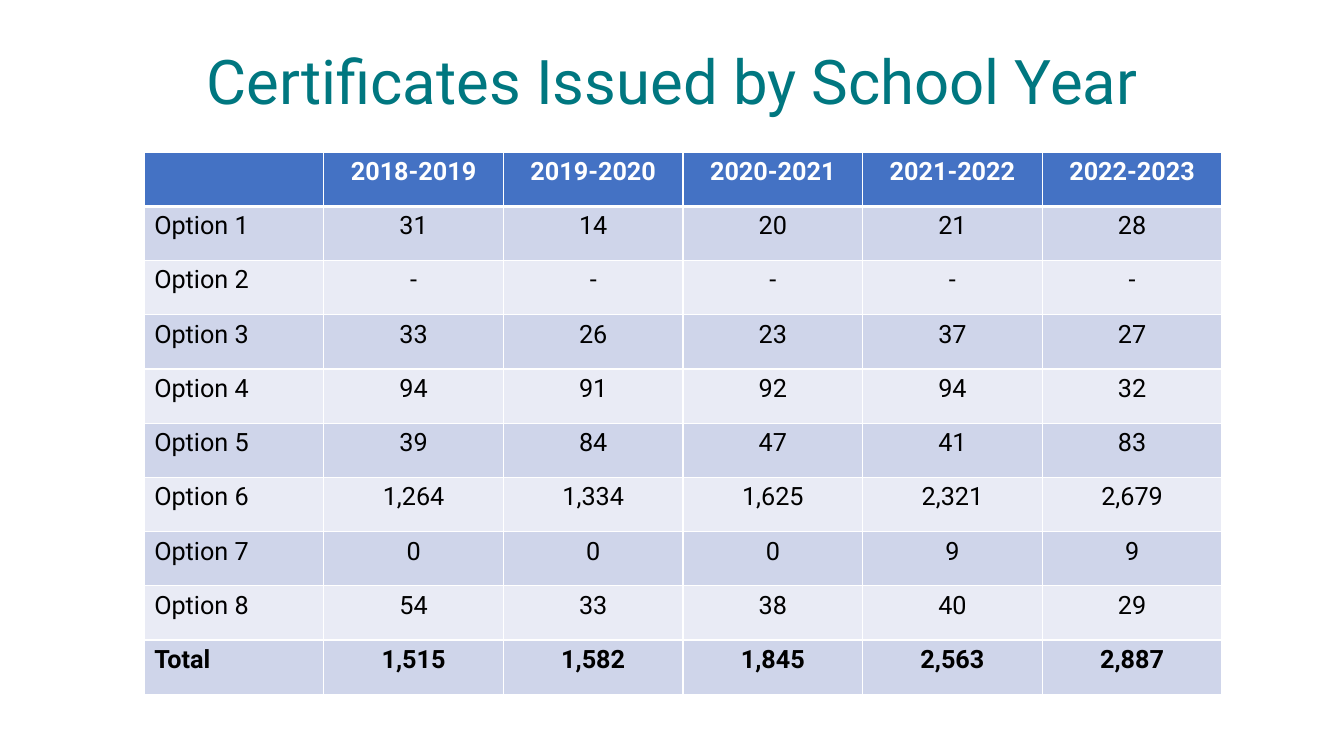
from lxml.etree import SubElement
from pptx import Presentation
from pptx.dml.color import RGBColor
from pptx.enum.text import MSO_ANCHOR, PP_ALIGN
from pptx.oxml.ns import qn
from pptx.util import Inches, Pt

COLORS = {"title": "007780", "head": "4472C4", "dark": "CFD5EA",
          "light": "E9EBF5", "white": "FFFFFF", "black": "000000"}
ROWS = [
    ["", "2018-2019", "2019-2020", "2020-2021", "2021-2022", "2022-2023"],
    ["Option 1", "31", "14", "20", "21", "28"],
    ["Option 2", "-", "-", "-", "-", "-"],
    ["Option 3", "33", "26", "23", "37", "27"],
    ["Option 4", "94", "91", "92", "94", "32"],
    ["Option 5", "39", "84", "47", "41", "83"],
    ["Option 6", "1,264", "1,334", "1,625", "2,321", "2,679"],
    ["Option 7", "0", "0", "0", "9", "9"],
    ["Option 8", "54", "33", "38", "40", "29"],
    ["Total", "1,515", "1,582", "1,845", "2,563", "2,887"],
]


class Deck:
    """Hold the style and the current slide."""

    def __init__(self, font):
        self.font = font
        self.show = Presentation()
        self.show.slide_width = Inches(13.33)
        self.show.slide_height = Inches(7.5)
        self.slide = self.show.slides.add_slide(self.show.slide_layouts[5])

    def label(self, frame, text, size, color, align, bold=False):
        """Set the text of a frame and format it."""
        frame.text = text
        para = frame.paragraphs[0]
        para.alignment = align
        for run in para.runs:
            run.font.name = self.font
            run.font.size = Pt(size)
            run.font.bold = bold
            run.font.color.rgb = RGBColor.from_string(COLORS[color])

    def title(self, text, left, top, width, height):
        """Place and format the title."""
        shape = self.slide.shapes.title
        shape.left, shape.top = Inches(left), Inches(top)
        shape.width, shape.height = Inches(width), Inches(height)
        frame = shape.text_frame
        self.label(frame, text, 44, "title", PP_ALIGN.CENTER)
        frame.vertical_anchor = MSO_ANCHOR.MIDDLE
        frame.paragraphs[0].line_spacing = 0.9

    def edge(self, cell, side, width):
        """Draw one white border of a cell."""
        line = SubElement(cell._tc.get_or_add_tcPr(), qn(f"a:ln{side}"), w=str(Pt(width)))
        fill = SubElement(line, qn("a:solidFill"))
        SubElement(fill, qn("a:srgbClr"), val=COLORS["white"])

    def table(self, rows, left, top, width, height):
        """Add a banded table with a header row and a total row."""
        grid = self.slide.shapes.add_table(
            len(rows), len(rows[0]), Inches(left), Inches(top),
            Inches(width), Inches(height)).table
        last = len(rows) - 1
        for r, row in enumerate(rows):
            band = "head" if r == 0 else "dark" if r % 2 else "light"
            for c, text in enumerate(row):
                cell = grid.cell(r, c)
                self.label(cell.text_frame, text, 18,
                           "black" if r else "white",
                           PP_ALIGN.CENTER if c else PP_ALIGN.LEFT,
                           r in (0, last))
                for side in "LRTB":
                    thick = (r, side) in ((0, "B"), (1, "T"))
                    self.edge(cell, side, 3 if thick else 1)
                cell.fill.solid()
                cell.fill.fore_color.rgb = RGBColor.from_string(COLORS[band])


def main():
    """Build the slide and save it."""
    deck = Deck("Roboto")
    deck.table(ROWS, 1.43, 1.51, 10.69, 5.38)
    deck.title("Certificates Issued by School Year", 0.92, 0.11, 11.5, 1.45)
    deck.show.save("out.pptx")


if __name__ == "__main__":
    main()
